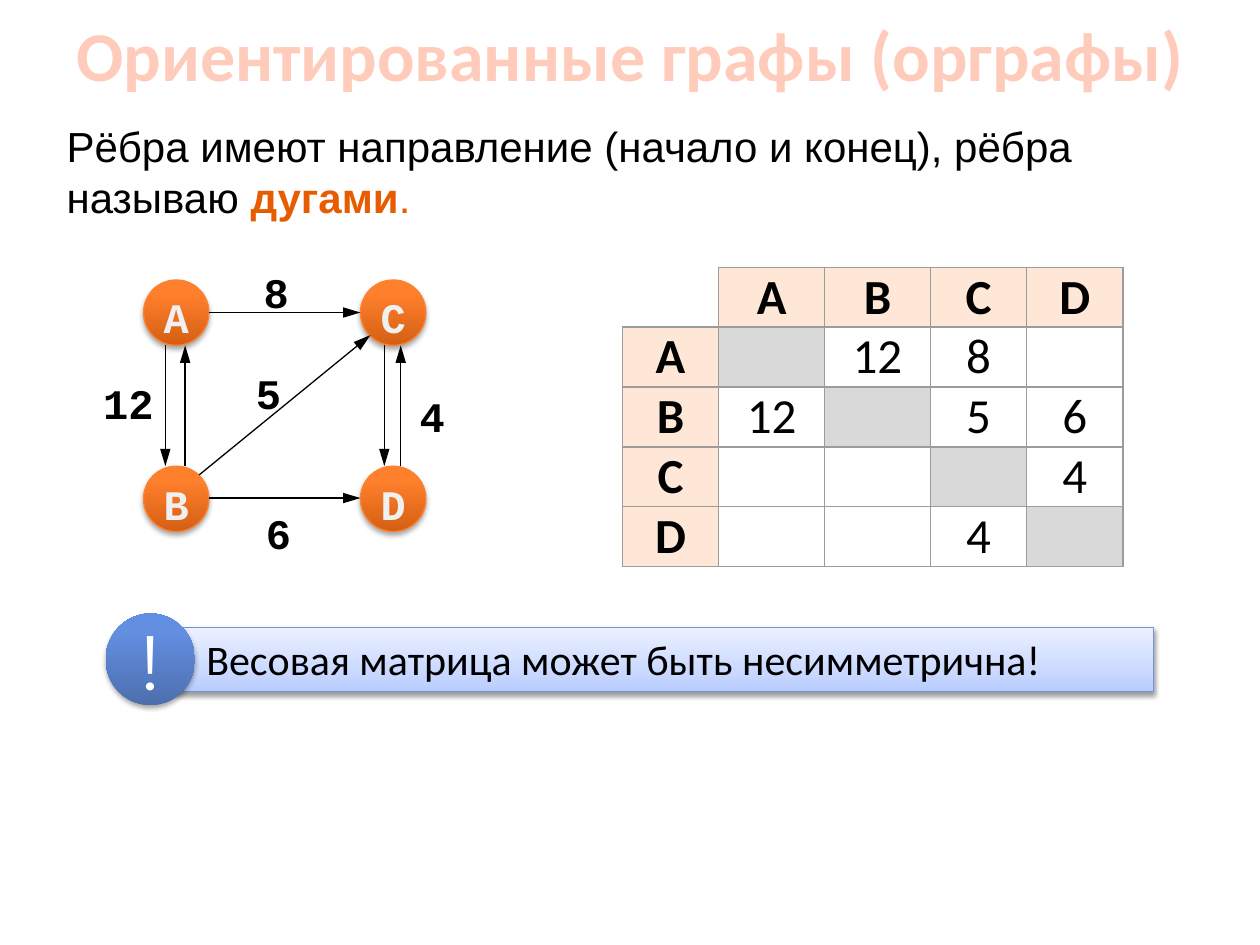
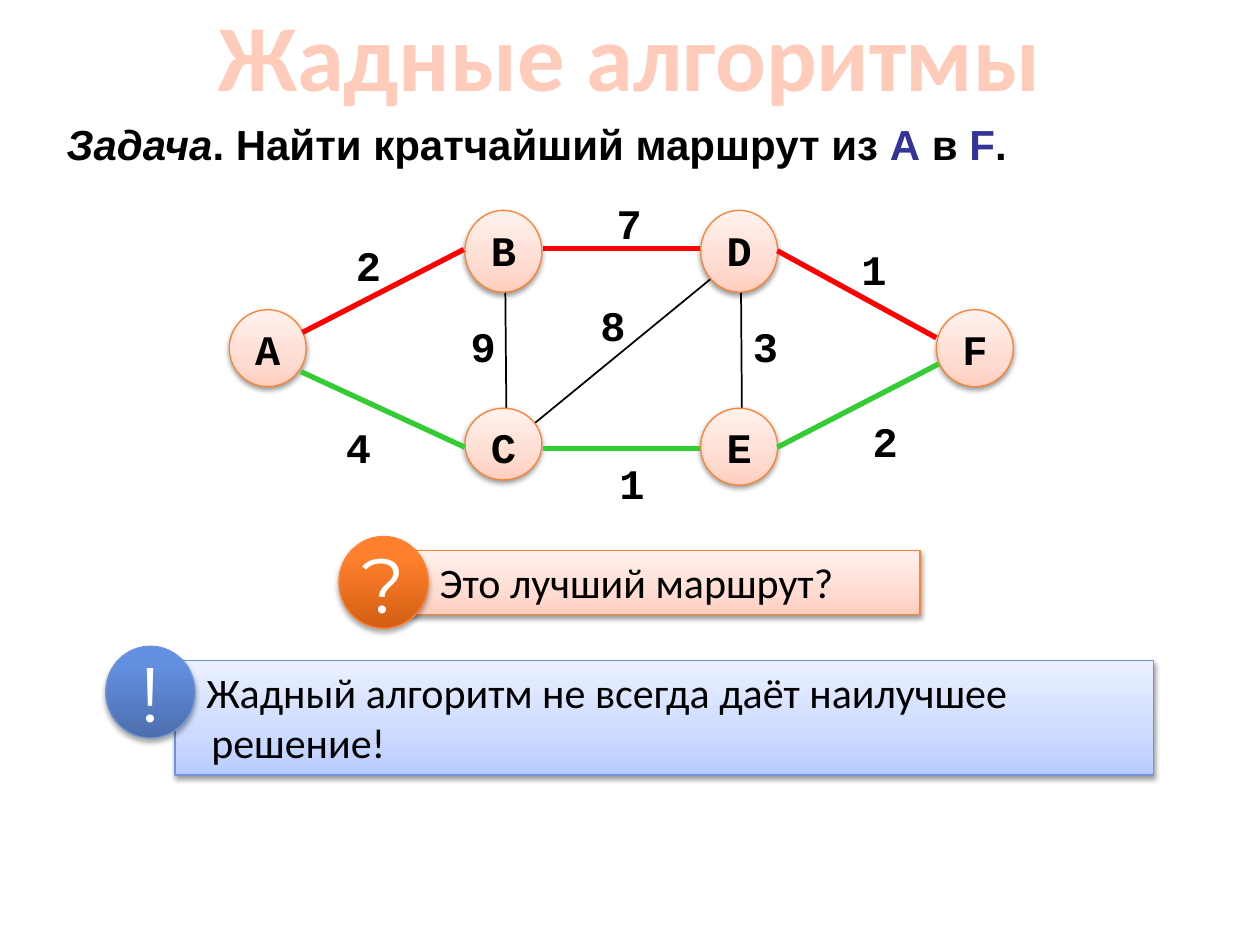
from dataclasses import dataclass

from pptx import Presentation
from pptx import util as u
from pptx.dml.color import RGBColor
from pptx.enum import shapes, text
from pptx.oxml import parse_xml
from pptx.oxml.ns import nsdecls, qn

Pt = u.Pt
ALIGN = text.PP_ALIGN
ANCHOR = text.MSO_ANCHOR


@dataclass(frozen=True)
class Paint:
    """Upright gradient (bottom stop first), its rim colour and shadow."""
    stops: tuple
    rim: str
    shade: int
    drop: float


@dataclass(frozen=True)
class Theme:
    head: str = "Calibri"
    body: str = "Arial"
    mono: str = "Courier New"
    sign: str = "Montserrat"
    text: int = 24
    cell: int = 28
    mark: int = 44
    black: str = "000000"
    white: str = "FFFFFF"
    light: str = "F0F0F0"
    title: str = "FFCCBB"
    accent: str = "E75C01"
    blue: str = "333399"
    red: str = "FF0000"
    green: str = "33CC33"
    border: str = "9C9C9C"
    label: str = "FFE7D7"
    diag: str = "D9D9D9"
    orange: Paint = Paint(((0, "D45F13"), (80, "FF802C"), (100, "FF812E")), "FD8231", 35, 1.8)
    peach: Paint = Paint(((0, "FFCEBF"), (35, "FFDCD2"), (100, "FFF2EE")), "FD8231", 38, 1.6)
    navy: Paint = Paint(((0, "4C6EAD"), (80, "638FE1"), (100, "618FE4")), "7094D7", 35, 1.8)
    sky: Paint = Paint(((0, "B8CCFF"), (35, "CCDAFF"), (100, "EBF1FF")), "7094D7", 38, 1.6)


T = Theme()


@dataclass(frozen=True)
class Box:
    x: float
    y: float
    w: float
    h: float

    def pts(self) -> tuple:
        return Pt(self.x), Pt(self.y), Pt(self.w), Pt(self.h)


@dataclass(frozen=True)
class Node:
    name: str
    box: Box


@dataclass(frozen=True)
class Edge:
    start: tuple
    end: tuple
    color: str = T.black
    width: float = 1
    arrow: bool = False


@dataclass(frozen=True)
class Span:
    text: str
    color: str = T.black
    bold: bool = False
    slant: bool = False


@dataclass(frozen=True)
class Note:
    sign: str
    text: str
    box: Box
    badge: Paint
    fill: Paint
    rim: bool = True


def style(run, face: str, size: float, color: str, bold: bool = False, slant: bool = False) -> None:
    font = run.font
    font.name, font.size, font.bold, font.italic = face, Pt(size), bold, slant
    font.color.rgb = RGBColor.from_string(color)


def pad(frame, left: float = 0, top: float = 0, right: float = 0, base: float = 0) -> None:
    frame.margin_left, frame.margin_top = Pt(left), Pt(top)
    frame.margin_right, frame.margin_bottom = Pt(right), Pt(base)


def paint(shape, look: Paint, rim: bool = True) -> None:
    stops = "".join(f'<a:gs pos="{pos * 1000}"><a:srgbClr val="{color}"/></a:gs>'
                    for pos, color in look.stops)
    props = shape._element.spPr
    props.find(qn("a:prstGeom")).addnext(parse_xml(
        f'<a:gradFill {nsdecls("a")} rotWithShape="1"><a:gsLst>{stops}</a:gsLst>'
        '<a:lin ang="16200000" scaled="0"/></a:gradFill>'))
    if rim:
        shape.line.color.rgb = RGBColor.from_string(look.rim)
        shape.line.width = Pt(0.75)
    else:
        shape.line.fill.background()
    shape.shadow.inherit = False
    props.find(qn("a:effectLst")).append(parse_xml(
        f'<a:outerShdw {nsdecls("a")} blurRad="{Pt(3.1)}" dist="{Pt(look.drop)}" dir="5400000" '
        f'rotWithShape="0"><a:srgbClr val="{T.black}"><a:alpha val="{look.shade * 1000}"/>'
        '</a:srgbClr></a:outerShdw>'))


def put_text(shape, words: str, face: str, size: float, color: str, bold: bool = False,
             align=ALIGN.CENTER, anchor=ANCHOR.TOP) -> None:
    frame = shape.text_frame
    frame.text = words
    frame.vertical_anchor = anchor
    para = frame.paragraphs[0]
    para.alignment = align
    style(para.runs[0], face, size, color, bold)


def add_slide(deck, title: str, size: int):
    slide = deck.slides.add_slide(deck.slide_layouts[5])
    slide.background.fill.solid()
    slide.background.fill.fore_color.rgb = RGBColor.from_string(T.white)
    head = slide.shapes.title
    head.left, head.top, head.width, head.height = Box(0, 0, 720, 61).pts()
    put_text(head, title, T.head, size, T.title, True, anchor=ANCHOR.MIDDLE)
    head.text_frame.auto_size = text.MSO_AUTO_SIZE.NONE
    return slide


def add_lead(slide, box: Box, spans: list[Span]) -> None:
    frame = slide.shapes.add_textbox(*box.pts()).text_frame
    frame.word_wrap = True
    for span in spans:
        run = frame.paragraphs[0].add_run()
        run.text = span.text
        style(run, T.body, T.text, span.color, span.bold, span.slant)


def add_node(slide, node: Node, look: Paint, color: str) -> None:
    oval = slide.shapes.add_shape(shapes.MSO_SHAPE.OVAL, *node.box.pts())
    paint(oval, look)
    pad(oval.text_frame, top=1.4)
    put_text(oval, node.name, T.mono, T.text, color, True)


def add_weight(slide, node: Node) -> None:
    oval = slide.shapes.add_shape(shapes.MSO_SHAPE.OVAL, *node.box.pts())
    oval.fill.background()
    oval.line.fill.background()
    oval.shadow.inherit = False
    pad(oval.text_frame)
    put_text(oval, node.name, T.mono, T.text, T.black, True)


def add_edge(slide, edge: Edge) -> None:
    ends = [Pt(v) for v in (*edge.start, *edge.end)]
    line = slide.shapes.add_connector(shapes.MSO_CONNECTOR.STRAIGHT, *ends)
    line.line.color.rgb = RGBColor.from_string(edge.color)
    line.line.width = Pt(edge.width)
    props = line._element.spPr
    if edge.arrow:
        props.find(qn("a:ln")).append(parse_xml(
            f'<a:tailEnd {nsdecls("a")} type="triangle" w="med" len="lg"/>'))
    props.append(parse_xml(f'<a:effectLst {nsdecls("a")}/>'))


def add_note(slide, note: Note) -> None:
    """Draw a bar of text with a round sign over its left end."""
    bar = slide.shapes.add_shape(shapes.MSO_SHAPE.RECTANGLE, *note.box.pts())
    paint(bar, note.fill)
    put_text(bar, note.text, T.head, T.text, T.black, align=ALIGN.LEFT)
    props = bar.text_frame.paragraphs[0]._p.get_or_add_pPr()
    props.set("marL", str(Pt(13.7)))
    props.set("indent", str(Pt(-2.9)))
    spot = Box(note.box.x - 39.6, note.box.y - 8, 51, 52.5)
    badge = slide.shapes.add_shape(shapes.MSO_SHAPE.OVAL, *spot.pts())
    paint(badge, note.badge, note.rim)
    badge.text_frame.word_wrap = False
    put_text(badge, note.sign, T.sign, T.mark, T.white, anchor=ANCHOR.MIDDLE)


def set_edges(cell, shown: str) -> None:
    """Draw the cell borders named in shown (of L, R, T, B) and hide the others."""
    for i, side in enumerate("LRTB"):
        fill = (f'<a:solidFill><a:srgbClr val="{T.border}"/></a:solidFill>'
                if side in shown else "<a:noFill/>")
        cell._tc.get_or_add_tcPr().insert(i, parse_xml(
            f'<a:ln{side} {nsdecls("a")} w="{Pt(1)}">{fill}</a:ln{side}>'))


def add_matrix(slide, names: str, rows: list[list[str]]) -> None:
    widths, high = (55, 60.5, 60.5, 55, 55), 34.2
    count = len(widths)
    box = Box(355.7, 152.8, sum(widths), high * count)
    table = slide.shapes.add_table(count, count, *box.pts()).table
    table.first_row = table.horz_banding = False
    for i, wide in enumerate(widths):
        table.columns[i].width = Pt(wide)
        table.rows[i].height = Pt(high)
    grid = [["", *names]] + [[name, *row] for name, row in zip(names, rows)]
    for r, row in enumerate(grid):
        for c, value in enumerate(row):
            cell = table.cell(r, c)
            corner, head = r == c == 0, r == 0 or c == 0
            pad(cell, 13.7, 0, 13.7, 0)
            if corner or not head and r != c:
                cell.fill.background()
            else:
                cell.fill.solid()
                cell.fill.fore_color.rgb = RGBColor.from_string(T.label if head else T.diag)
            if value:
                put_text(cell, value, T.head, T.cell, T.black, head)
            set_edges(cell, "RB" if corner else "LRTB")


def digraph(deck) -> None:
    slide = add_slide(deck, "Ориентированные графы (орграфы)", 40)
    add_lead(slide, Box(31, 65.5, 656, 71), [
        Span("Рёбра имеют направление (начало и конец), рёбра называю "),
        Span("дугами", T.accent, True), Span(".", T.accent)])
    side, left, right, top, base = 37.4, 82, 206, 160, 266.4
    for name, x, y in (("A", left, top), ("B", left, base), ("C", right, top), ("D", right, base)):
        add_node(slide, Node(name, Box(x, y, side, side)), T.orange, T.light)
    low = top + side
    for start, end in (
            ((left + side, 178.6), (right, 178.6)),
            ((left + side, 284.6), (right, 284.6)),
            ((94.5, low), (94.5, base)),
            ((105.8, base), (105.8, low)),
            ((219.6, low), (219.6, base)),
            ((229, base), (229, low)),
            ((113.8, 271.4), (211.7, 191.5))):
        add_edge(slide, Edge(start, end, width=0.75, arrow=True))
    for name, x, y, wide in (("12", 50.4, 210.2, 46), ("8", 118.8, 147, 78), ("5", 114.5, 204.5, 78),
                             ("4", 227.5, 217.4, 39), ("6", 120.2, 284.4, 78)):
        add_weight(slide, Node(name, Box(x, y, wide, side)))
    add_matrix(slide, "ABCD", [["", "12", "8", ""], ["12", "", "5", "6"],
                               ["", "", "", "4"], ["", "", "4", ""]])
    add_note(slide, Note("!", "Весовая матрица может быть несимметрична!",
                         Box(100, 358.6, 559, 36.5), T.navy, T.sky, rim=False))


def greedy(deck) -> None:
    slide = add_slide(deck, "Жадные алгоритмы", 54)
    add_lead(slide, Box(31, 64, 656, 38), [
        Span("Задача", bold=True, slant=True), Span(". Найти кратчайший маршрут из ", bold=True),
        Span("А", T.blue, True), Span(" в ", bold=True), Span("F", T.blue, True),
        Span(".", bold=True)])
    for start, end in (((288.7, 157.7), (289.4, 239.8)), ((423.4, 157.7), (424, 239.8)),
                       ((292.3, 252.7), (408.2, 157.7))):
        add_edge(slide, Edge(start, end))
    side, step, left = 44, 134.7, 131
    for name, col, y, high in (("A", 0, 177, side), ("B", 1, 120.2, 46.8), ("C", 1, 233.3, 41),
                               ("D", 2, 120.2, 46.8), ("E", 2, 233.3, side), ("F", 3, 177, side)):
        add_node(slide, Node(name, Box(left + col * step, y, side, high)), T.peach, T.black)
    for name, x, y in (("2", 187.2, 130.3), ("4", 181.4, 234.7), ("7", 336.2, 106.6),
                       ("8", 326.9, 165), ("9", 252.7, 177), ("3", 414, 177),
                       ("1", 337.7, 255), ("1", 476, 132.5), ("2", 482.4, 231)):
        add_weight(slide, Node(name, Box(x, y, 46.8, side)))
    for color, route in (
            (T.red, (((172.8, 190), (265, 142.6)), ((310.3, 141.8), (400.3, 141.8)),
                     ((444.2, 143.3), (535, 193)))),
            (T.green, (((172, 212.4), (265.7, 255.6)), ((310.3, 256.3), (400.3, 256.3)),
                       ((444.2, 255.6), (536.4, 208))))):
        for start, end in route:
            add_edge(slide, Edge(start, end, color, 3))
    add_note(slide, Note("?", "Это лучший маршрут?", Box(233.3, 314.6, 292.5, 36.5),
                         T.orange, T.peach))
    add_note(slide, Note("!", "Жадный алгоритм не всегда даёт наилучшее решение!",
                         Box(100, 377.3, 559, 65.6), T.navy, T.sky))


def main() -> None:
    deck = Presentation()
    deck.slide_width, deck.slide_height = Pt(720), Pt(540)
    digraph(deck)
    greedy(deck)
    deck.save("out.pptx")


if __name__ == "__main__":
    main()
